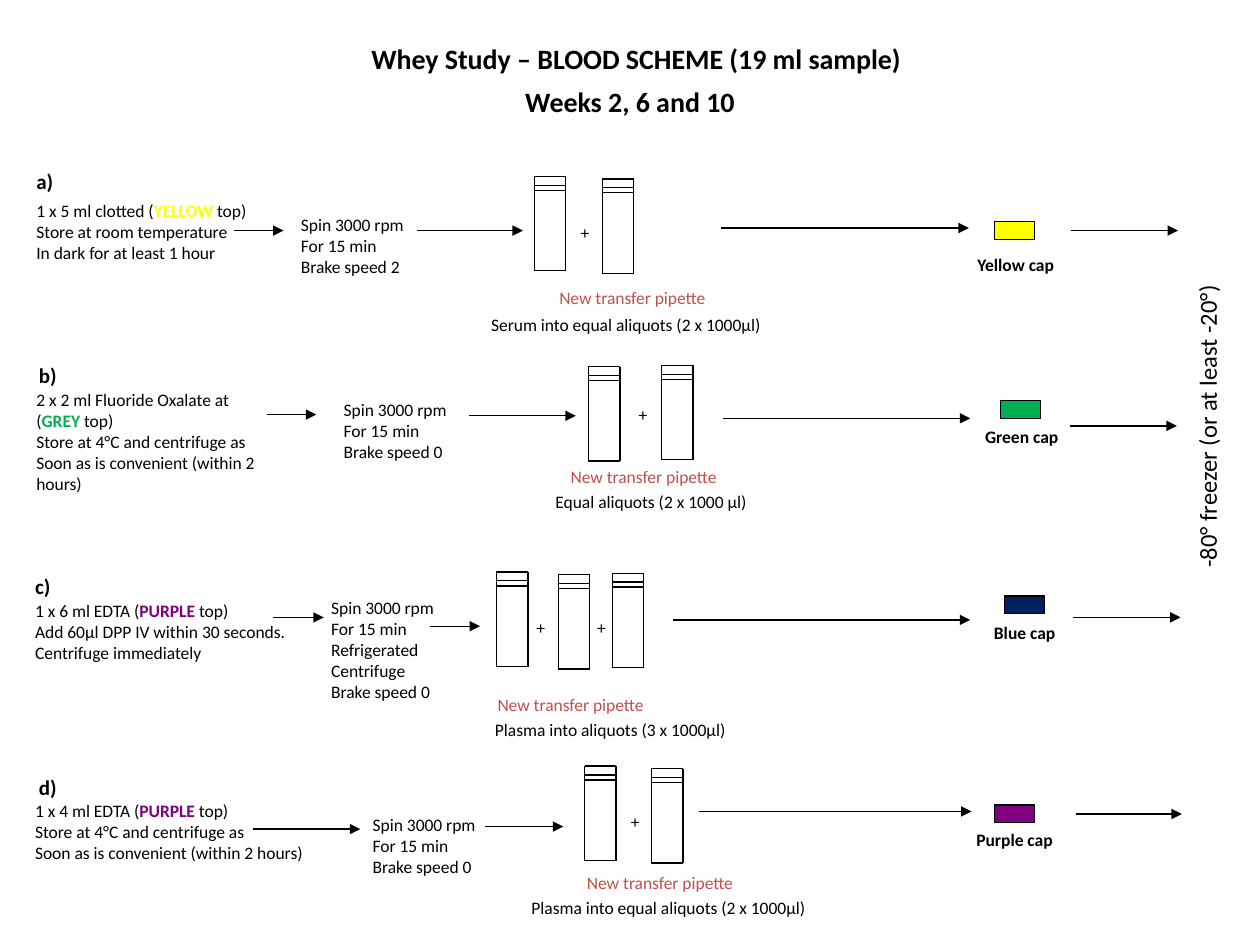
"""Build the blood sample handling scheme as one slide with four process rows."""
from dataclasses import dataclass

from lxml.etree import SubElement
from pptx import Presentation
from pptx.dml.color import RGBColor as Rgb
from pptx.enum.shapes import MSO_CONNECTOR as Connector, MSO_SHAPE as Shape
from pptx.enum.text import MSO_ANCHOR as Anchor, MSO_AUTO_SIZE as AutoSize, PP_ALIGN as Align
from pptx.oxml.ns import qn
from pptx.util import Cm, Pt


@dataclass(frozen=True)
class Theme:
    font: str = "Calibri"
    ink: str = "000000"
    pipette: str = "C0504D"
    yellow: str = "FFFF00"
    grey_top: str = "00B050"
    purple: str = "800080"
    blue: str = "002060"
    title: int = 16
    freezer: int = 14
    letter: int = 12
    body: int = 10
    line: float = 0.75


THEME = Theme()
CM_PER_INCH = 2.54
TUBE_WIDTH, TUBE_HEIGHT = 0.25, 0.75
TUBE_RINGS = (0, 0.07, 0.11, TUBE_HEIGHT)
CAP_SIZE = (0.32, 0.14)
PLUS_SIZE = (0.27, 0.27)
LINE_HEIGHT = 0.27
PIPETTE_WIDTH = 1.39

HEADINGS = [
    ("Whey Study – BLOOD SCHEME (19 ml sample)", (1.44, 0.28, 7.22, 0.37)),
    ("Weeks 2, 6 and 10", (1.39, 0.62, 7.22, 0.37)),
]
FREEZER = ("-80° freezer (or at least -20°)", (8.34, 3.19, 2.49, 0.34))
SPIN = ["Spin 3000 rpm", "For 15 min"]
COOL_STORAGE = ["Store at 4°C and centrifuge as", "Soon as is convenient (within 2 hours)"]

ROWS = [
    {
        "letter": ("a)", (0.19, 1.29, 0.34, 0.3)),
        "sample": ([["1 x 5 ml clotted (", ("YELLOW ", THEME.yellow), "top)"],
                    "Store at room temperature", "In dark for at least 1 hour"],
                   (0.19, 1.54, 1.91, 0.61), False),
        "spin": (SPIN + ["Brake speed 2"], (2.29, 1.65, 1.06, 0.61), False),
        "tubes": [(4.24, 1.4), (4.78, 1.42)],
        "pluses": [(4.51, 1.71)],
        "pipette": (4.34, 2.23),
        "aliquots": ("Serum into equal aliquots (2 x 1000µl)", (3.8, 2.44, 2.37)),
        "cap": ("Yellow cap", (7.66, 1.97, 0.83), (7.89, 1.76), THEME.yellow),
        "arrows": [(1.86, 2.25, 1.83), (3.31, 4.15, 1.83), (5.72, 7.69, 1.81), (8.5, 9.35, 1.83)],
    },
    {
        "letter": ("b)", (0.21, 2.83, 0.35, 0.3)),
        "sample": ([["2 x 2 ml Fluoride Oxalate at (", ("GREY ", THEME.grey_top), "top)"],
                    *COOL_STORAGE], (0.19, 3.04, 2.03, 0.94), True),
        "spin": (SPIN + ["Brake speed 0"], (2.63, 3.12, 1.06, 0.61), False),
        "tubes": [(4.67, 2.91), (5.25, 2.9)],
        "pluses": [(4.97, 3.16)],
        "pipette": (4.43, 3.65),
        "aliquots": ("Equal aliquots (2 x 1000 µl)", (4.31, 3.85, 1.74)),
        "cap": ("Green cap", (7.72, 3.33, 0.79), (7.94, 3.18), THEME.grey_top),
        "arrows": [(2.12, 2.51, 3.29), (3.72, 4.57, 3.3), (5.74, 7.7, 3.32), (8.49, 9.34, 3.38)],
    },
    {
        "letter": ("c)", (0.18, 4.5, 0.32, 0.3)),
        "sample": ([["1 x 6 ml EDTA (", ("PURPLE ", THEME.purple), "top)"],
                    "Add 60µl DPP IV within 30 seconds.", "Centrifuge immediately"],
                   (0.18, 4.71, 2.21, 0.61), False),
        "spin": (SPIN + ["Refrigerated Centrifuge", "Brake speed 0"],
                 (2.53, 4.69, 1.04, 1.11), True),
        "tubes": [(3.94, 4.54), (4.43, 4.56), (4.86, 4.55)],
        "pluses": [(4.16, 4.85), (4.64, 4.85)],
        "pipette": (3.85, 5.46),
        "aliquots": ("Plasma into aliquots (3 x 1000µl)", (3.83, 5.66, 2.05)),
        "cap": ("Blue cap", (7.79, 4.89, 0.69), (7.97, 4.73), THEME.blue),
        "arrows": [(2.17, 2.57, 4.9), (3.41, 3.81, 4.97), (5.34, 7.7, 4.92), (8.52, 9.37, 4.9)],
    },
    {
        "letter": ("d)", (0.21, 6.1, 0.35, 0.3)),
        "sample": ([["1 x 4 ml EDTA (", ("PURPLE", THEME.purple), " top)"],
                    *COOL_STORAGE], (0.18, 6.3, 2.36, 0.61), False),
        "spin": (SPIN + ["Brake speed 0"], (2.86, 6.41, 1.06, 0.61), False),
        "tubes": [(4.64, 6.08), (5.17, 6.1)],
        "pluses": [(4.91, 6.39)],
        "pipette": (4.56, 6.87),
        "aliquots": ("Plasma into equal aliquots (2 x 1000µl)", (4.12, 7.07, 2.4)),
        "cap": ("Purple cap", (7.65, 6.53, 0.82), (7.89, 6.39), THEME.purple),
        "arrows": [(2.01, 2.86, 6.58), (3.85, 4.47, 6.56), (5.55, 7.71, 6.44), (8.54, 9.38, 6.46)],
    },
]


def lengths(*inches):
    return [Cm(value * CM_PER_INCH) for value in inches]


def write(frame, lines, size=THEME.body, color=THEME.ink, bold=False, wrap=False):
    frame.word_wrap = wrap
    frame.auto_size = AutoSize.SHAPE_TO_FIT_TEXT
    for index, line in enumerate(lines):
        paragraph = frame.add_paragraph() if index else frame.paragraphs[0]
        for part in [line] if isinstance(line, str) else line:
            marked = isinstance(part, tuple)
            words, tint = part if marked else (part, color)
            run = paragraph.add_run()
            run.text = words
            run.font.name = THEME.font
            run.font.size = Pt(size)
            run.font.bold = bold or marked
            run.font.color.rgb = Rgb.from_string(tint)


def add_text(slide, lines, box, **style):
    label = slide.shapes.add_textbox(*lengths(*box))
    write(label.text_frame, lines, **style)
    return label


def add_heading(shape, words, box):
    shape.left, shape.top, shape.width, shape.height = lengths(*box)
    frame = shape.text_frame
    write(frame, [words], size=THEME.title, bold=True, wrap=True)
    frame.vertical_anchor = Anchor.TOP
    frame.paragraphs[0].alignment = Align.CENTER
    frame.paragraphs[0].space_before = Pt(6)


def add_line(shapes, x1, y1, x2, y2, arrow=False):
    connector = shapes.add_connector(Connector.STRAIGHT, *lengths(x1, y1, x2, y2))
    connector.line.color.rgb = Rgb.from_string(THEME.ink)
    connector.line.width = Pt(THEME.line)
    properties = connector.line._get_or_add_ln()
    if arrow:
        SubElement(properties, qn("a:tailEnd"), type="triangle")
    SubElement(properties.getparent(), qn("a:effectLst"))


def add_tube(slide, left, top):
    tube = slide.shapes.add_group_shape().shapes
    right = left + TUBE_WIDTH
    for side in (left, right):
        add_line(tube, side, top, side, top + TUBE_HEIGHT)
    for ring in TUBE_RINGS:
        add_line(tube, left, top + ring, right, top + ring)


def add_cap(slide, name, name_box, corner, color):
    cap = slide.shapes.add_shape(Shape.RECTANGLE, *lengths(*corner, *CAP_SIZE))
    cap.shadow.inherit = False
    cap.fill.solid()
    cap.fill.fore_color.rgb = Rgb.from_string(color)
    cap.line.color.rgb = Rgb.from_string(THEME.ink)
    cap.line.width = Pt(THEME.line)
    add_text(slide, [name], (*name_box, LINE_HEIGHT), bold=True)


def add_row(slide, row):
    letter, letter_box = row["letter"]
    add_text(slide, [letter], letter_box, size=THEME.letter, bold=True)
    for step in ("sample", "spin"):
        lines, box, wrap = row[step]
        add_text(slide, lines, box, wrap=wrap)
    for corner in row["tubes"]:
        add_tube(slide, *corner)
    for corner in row["pluses"]:
        add_text(slide, ["+"], (*corner, *PLUS_SIZE))
    add_text(slide, ["New transfer pipette"], (*row["pipette"], PIPETTE_WIDTH, LINE_HEIGHT),
             color=THEME.pipette)
    aliquots, aliquots_box = row["aliquots"]
    add_text(slide, [aliquots], (*aliquots_box, LINE_HEIGHT))
    add_cap(slide, *row["cap"])
    for start, end, level in row["arrows"]:
        add_line(slide.shapes, start, level, end, level, arrow=True)


def main():
    deck = Presentation()
    deck.slide_width, deck.slide_height = Cm(25.4), Cm(19.05)
    slide = deck.slides.add_slide(deck.slide_layouts[5])
    title, weeks = HEADINGS
    add_heading(slide.shapes.title, *title)
    add_heading(slide.shapes.add_textbox(*lengths(*weeks[1])), *weeks)
    for row in ROWS:
        add_row(slide, row)
    freezer, freezer_box = FREEZER
    add_text(slide, [freezer], freezer_box, size=THEME.freezer).rotation = 270
    deck.save("out.pptx")


if __name__ == "__main__":
    main()
